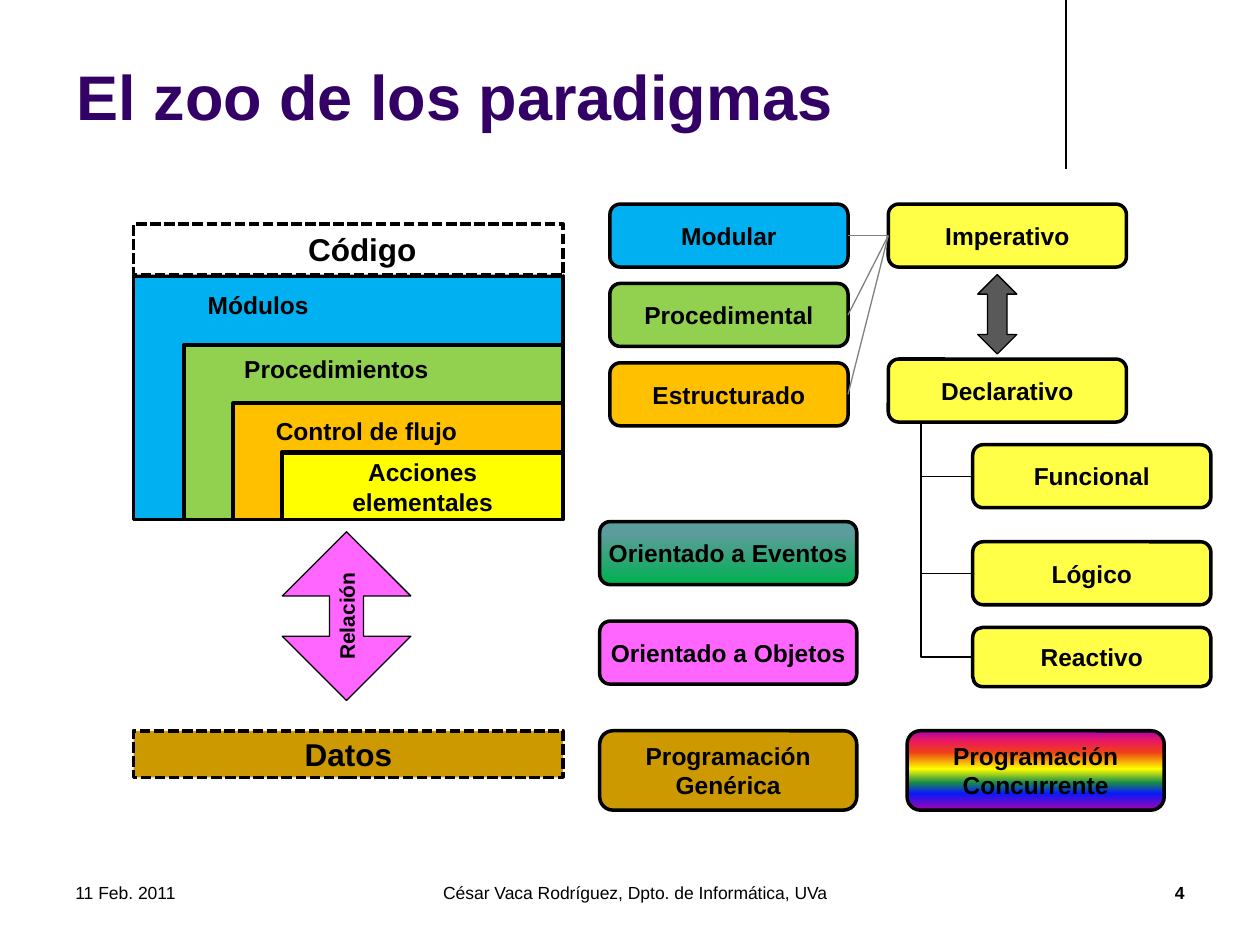
from dataclasses import dataclass
from typing import Optional, Union

from lxml import etree
from pptx import Presentation
from pptx.dml.color import RGBColor
from pptx.enum.dml import MSO_LINE
from pptx.enum.shapes import MSO_CONNECTOR, MSO_SHAPE
from pptx.enum.text import MSO_ANCHOR, MSO_AUTO_SIZE, PP_ALIGN
from pptx.oxml import parse_xml
from pptx.oxml.ns import nsdecls, qn
from pptx.util import Inches, Pt

LEFT, CENTER, RIGHT = PP_ALIGN.LEFT, PP_ALIGN.CENTER, PP_ALIGN.RIGHT
TOP, MIDDLE = MSO_ANCHOR.TOP, MSO_ANCHOR.MIDDLE
RECT, ROUND = MSO_SHAPE.RECTANGLE, MSO_SHAPE.ROUNDED_RECTANGLE
CORNER, ARROW = MSO_SHAPE.CORNER, MSO_SHAPE.UP_DOWN_ARROW
STRAIGHT, DASH = MSO_CONNECTOR.STRAIGHT, MSO_LINE.SQUARE_DOT
NO_FIT = MSO_AUTO_SIZE.NONE
LEFT_SIDE, RIGHT_SIDE = 1, 3

COLUMNS, ROWS = 100, 75
BLACK, GRAY, YELLOW, PINK, OCHRE = "000000", "808080", "FFFF47", "FF66FF", "CC9900"
BLUE, GREEN, ORANGE = "00B0F0", "92D050", "FFC000"
EVENTS = ((0, "00B050"), (80, "5B9C9C"), (100, "5B9E9E"))
RAINBOW = ((0, "A603AB"), (21, "0819FB"), (35, "1A8D48"), (52, "FFFF00"),
           (73, "EE3F17"), (88, "E81766"), (100, "A603AB"))

deck = Presentation()
deck.slide_width, deck.slide_height = Inches(10), Inches(7.5)
page = deck.slides.add_slide(deck.slide_layouts[5])
shapes = page.shapes


@dataclass
class Area:
    column: float
    row: float
    columns: float
    rows: float


@dataclass
class Node:
    label: str
    area: Area
    fill: Union[str, tuple]
    kind: int = ROUND
    size: float = 14
    weight: float = 2
    dash: Optional[int] = None
    adjust: tuple = ()


@dataclass
class Label:
    text: str
    area: Area
    size: float = 14
    bold: bool = True
    align: int = LEFT
    anchor: int = TOP
    wrap: bool = False
    spacing: float = 0.9


def color(value: str) -> RGBColor:
    return RGBColor.from_string(value)


def across(columns: float) -> int:
    return round(deck.slide_width * columns / COLUMNS)


def down(rows: float) -> int:
    return round(deck.slide_height * rows / ROWS)


def place(area: Area) -> tuple:
    return across(area.column), down(area.row), across(area.columns), down(area.rows)


def write(box, text: str, size: float, bold: bool = True, align: int = CENTER,
          anchor: int = MIDDLE, wrap: bool = False, spacing: float = 1.0,
          ink: str = BLACK) -> None:
    frame = box.text_frame
    for name, value in {"word_wrap": wrap, "auto_size": NO_FIT, "vertical_anchor": anchor}.items():
        setattr(frame, name, value)
    frame.text = text
    for para in frame.paragraphs:
        para.alignment, para.line_spacing = align, spacing
        for span in para.runs:
            for name, value in {"name": "Arial", "size": Pt(size), "bold": bold}.items():
                setattr(span.font, name, value)
            span.font.color.rgb = color(ink)


def add_gradient(box, stops: tuple) -> None:
    gradient = parse_xml(f'<a:gradFill rotWithShape="1" {nsdecls("a")}><a:gsLst/>'
                         '<a:lin ang="16200000" scaled="0"/></a:gradFill>')
    for share, value in stops:
        stop = etree.SubElement(gradient[0], qn("a:gs"), pos=str(share * 1000))
        etree.SubElement(stop, qn("a:srgbClr"), val=value)
    box._element.spPr.insert(2, gradient)


def add_node(node: Node):
    box = shapes.add_shape(node.kind, *place(node.area))
    box.shadow.inherit = False
    if isinstance(node.fill, str):
        box.fill.solid()
        box.fill.fore_color.rgb = color(node.fill)
    else:
        add_gradient(box, node.fill)
    box.line.color.rgb = color(BLACK)
    box.line.width = Pt(node.weight)
    if node.dash is not None:
        box.line.dash_style = node.dash
    for index, value in enumerate(node.adjust):
        box.adjustments[index] = value
    if node.kind == CORNER:
        box._element.spPr.xfrm.set("flipV", "1")
    if node.label:
        write(box, node.label, node.size)
    return box


def add_label(label: Label) -> None:
    box = shapes.add_textbox(*place(label.area))
    write(box, label.text, label.size, label.bold, label.align, label.anchor,
          label.wrap, label.spacing)


def add_line(start: tuple, end: tuple, ink: str = BLACK):
    line = shapes.add_connector(STRAIGHT, across(start[0]), down(start[1]),
                                across(end[0]), down(end[1]))
    line.line.color.rgb = color(ink)
    line.line.width = Pt(0.75)
    etree.SubElement(line._element.spPr, qn("a:effectLst"))
    return line


def add_branch(start: tuple, end: tuple) -> None:
    width, height = end[0] - start[0], end[1] - start[1]
    left = (start[0] + end[0] - height) / 2
    top = (start[1] + end[1] - width) / 2
    line = add_line((left, top), (left + height, top + width))
    properties = line._element.spPr
    properties.xfrm.set("rot", "16200000")
    properties.xfrm.set("flipH", "1")
    properties.find(qn("a:prstGeom")).set("prst", "bentConnector2")


add_line((84.6, 0), (84.6, 13.4))
title = shapes.title
title.left, title.top, title.width, title.height = place(Area(5.1, 1.3, 78, 12.6))
write(title, "El zoo de los paradigmas", 36, align=LEFT, wrap=True, ink="330066")

for text, column, columns, align, bold in (
        ("11 Feb. 2011", 5, 23.3, LEFT, False),
        ("César Vaca Rodríguez, Dpto. de Informática, UVa", 30.3, 40.2, CENTER, False),
        ("4", 71.7, 23.3, RIGHT, True)):
    add_label(Label(text, Area(column, 68.3, columns, 5), 10, bold, align, MIDDLE, True, 1))

CODE_RIGHT, CODE_BOTTOM = 44.7, 41.25
for column, row, fill, adjust in ((10.6, 21.9, BLUE, (0.33, 0.21)),
                                  (14.6, 27.4, GREEN, (0.33, 0.31)),
                                  (18.5, 32, ORANGE, (0.42, 0.42))):
    area = Area(column, row, CODE_RIGHT - column, CODE_BOTTOM - row)
    add_node(Node("", area, fill, CORNER, adjust=adjust))
add_node(Node("Acciones\nelementales", Area(22.4, 36, 22.3, 5.25), "FFFF00", RECT))
for text, column, row, columns in (("Módulos", 15.5, 22.8, 10),
                                   ("Procedimientos", 18.4, 27.9, 16.7),
                                   ("Control de flujo", 20.9, 32.8, 16.5)):
    add_label(Label(text, Area(column, row, columns, 3.1)))

code = add_node(Node("Código", Area(10.6, 17.8, 34.1, 4), "FFFFFF", RECT, 18, dash=DASH))
code.text_frame.margin_left = Inches(0.32)
code.text_frame.vertical_anchor = TOP
add_node(Node("Datos", Area(10.6, 58, 34.1, 3.7), OCHRE, RECT, 18, dash=DASH))
relation = add_node(Node("Relación", Area(22.4, 42.2, 10.2, 13.4), PINK, ARROW, 12, 0.75,
                         adjust=(0.605, 0.263)))
relation.text_frame._txBody.bodyPr.set("vert", "vert270")
add_node(Node("", Area(77.6, 21.8, 3.1, 6.3), "595959", ARROW, weight=0.75))

NARROW, WIDE, HIGH, TALL = 18.9, 20.4, 5, 6.3
imperative = add_node(Node("Imperativo", Area(70.5, 16.2, NARROW, HIGH), YELLOW))
add_node(Node("Declarativo", Area(70.5, 28.5, NARROW, HIGH), YELLOW))

TRUNK, CHILD = 73.1, 77.2
branch_row = 33.5
for label, row, rows in (("Funcional", 35.3, HIGH), ("Lógico", 43, HIGH), ("Reactivo", 49.8, 4.7)):
    add_node(Node(label, Area(CHILD, row, NARROW, rows), YELLOW))
    middle = row + rows / 2
    add_branch((TRUNK, branch_row), (CHILD, middle))
    branch_row = middle

for index, (label, fill) in enumerate((("Modular", BLUE), ("Procedimental", GREEN),
                                       ("Estructurado", ORANGE))):
    style = add_node(Node(label, Area(48.4, 16.2 + 6.3 * index, NARROW, HIGH), fill))
    link = add_line((70.5, 18.7), (67.3, 18.7 + 6.3 * index), GRAY)
    link.begin_connect(imperative, LEFT_SIDE)
    link.end_connect(style, RIGHT_SIDE)

for label, column, row, rows, fill in (
        ("Orientado a Eventos", 47.6, 41.4, HIGH, EVENTS),
        ("Orientado a Objetos", 47.6, 49.3, HIGH, PINK),
        ("Programación\nGenérica", 47.6, 58, TALL, OCHRE),
        ("Programación\nConcurrente", 72, 58, TALL, RAINBOW)):
    add_node(Node(label, Area(column, row, WIDE, rows), fill))

deck.save("out.pptx")
